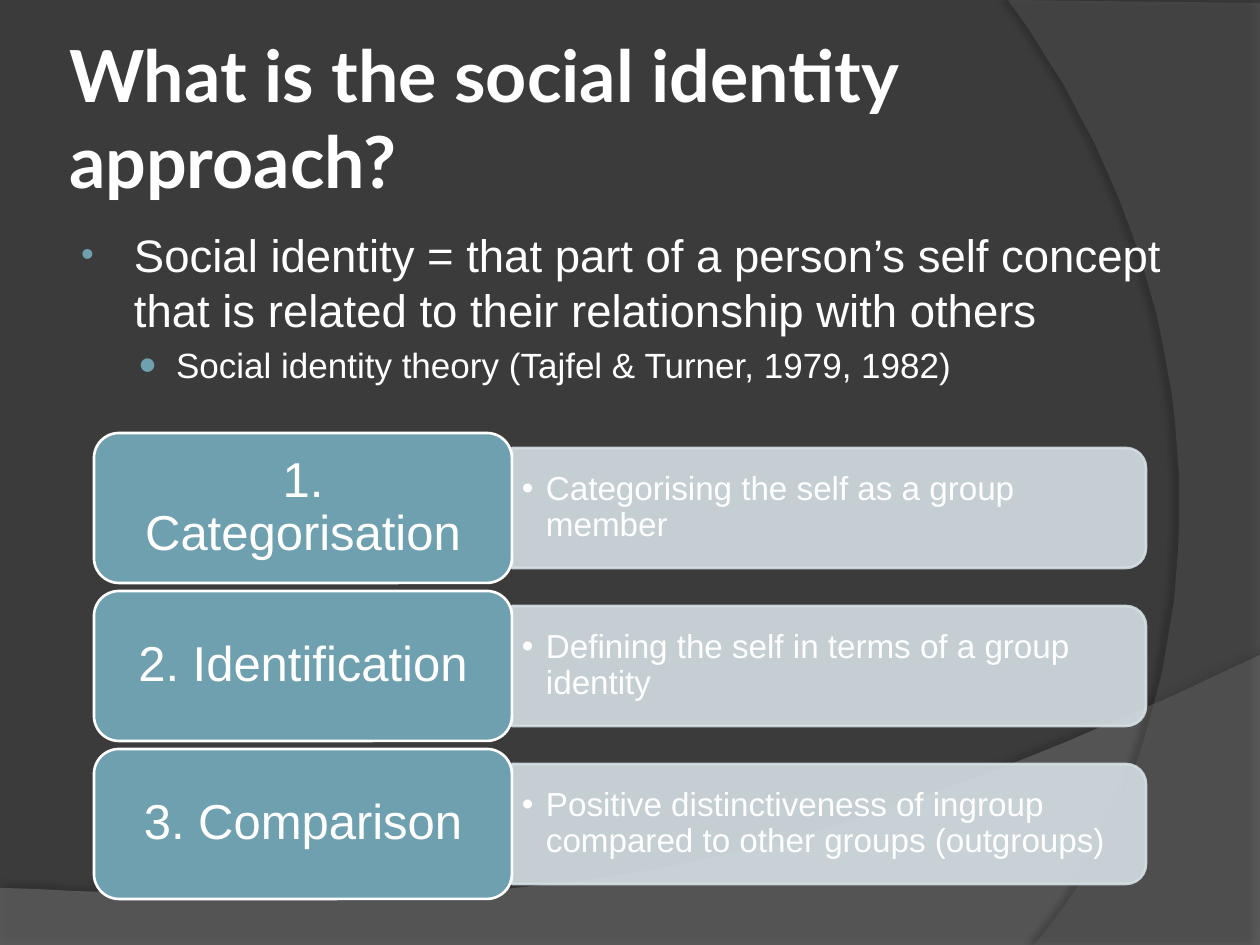
from lxml.etree import SubElement
from pptx import Presentation
from pptx.dml.color import RGBColor
from pptx.enum.shapes import MSO_SHAPE
from pptx.enum.text import MSO_ANCHOR, PP_ALIGN
from pptx.oxml.ns import qn
from pptx.util import Emu, Pt

SCALE = 914400 / 126


def px(n):
    return Emu(round(n * SCALE))


def color(code):
    return RGBColor.from_string(code)


def node(parent, tag, **attrs):
    return SubElement(parent, qn(tag), {k: str(v) for k, v in attrs.items()})


def curve(start, one, two, end, steps=40):
    """Points along a cubic curve, both ends included."""
    points = []
    for i in range(steps + 1):
        t = i / steps
        u = 1 - t
        points.append(tuple(u**3 * a + 3 * u * u * t * b + 3 * u * t * t * c + t**3 * d
                            for a, b, c, d in zip(start, one, two, end)))
    return points


class Deck:
    back, white, teal, pale = "3B3B3B", "FFFFFF", "6EA0B0", "D5DFE4"
    head, body = "Lato", "Arial"

    def __init__(self):
        self.prs = Presentation()
        self.prs.slide_width, self.prs.slide_height = px(1260), px(945)
        self.slide = self.prs.slides.add_slide(self.prs.slide_layouts[6])
        fill = self.slide.background.fill
        fill.solid()
        fill.fore_color.rgb = color(self.back)

    def paint(self, shape, fill, line=None, alpha=100):
        shape.shadow.inherit = False
        shape.fill.solid()
        shape.fill.fore_color.rgb = color(fill)
        if line:
            shape.line.color.rgb = color(line)
            shape.line.width = Pt(1.5)
        else:
            shape.line.fill.background()
        if alpha < 100:
            for tone in shape._element.spPr.iter(qn("a:srgbClr")):
                node(tone, "a:alpha", val=alpha * 1000)

    def wave(self, points, fill, alpha, dark, dist, angle):
        """A see-through sweep with a soft shadow."""
        pen = self.slide.shapes.build_freeform(*points[0], scale=SCALE)
        pen.add_line_segments(points[1:], close=True)
        shape = pen.convert_to_shape()
        self.paint(shape, fill, alpha=alpha)
        effects = shape._element.spPr.find(qn("a:effectLst"))
        shade = node(effects, "a:outerShdw", blurRad=Pt(4), dist=Pt(dist),
                     dir=angle * 60000, algn="ctr", rotWithShape=0)
        node(node(shade, "a:srgbClr", val="000000"), "a:alpha", val=dark * 1000)

    def shape(self, kind, x, y, w, h, fill, line, alpha=100):
        item = self.slide.shapes.add_shape(kind, px(x), px(y), px(w), px(h))
        self.paint(item, fill, line, alpha)
        return item

    def box(self, x, y, w, h, pad=(13, 6), anchor=MSO_ANCHOR.MIDDLE):
        item = self.slide.shapes.add_textbox(px(x), px(y), px(w), px(h))
        return self.frame(item, pad, anchor)

    def frame(self, item, pad, anchor=MSO_ANCHOR.MIDDLE):
        frame = item.text_frame
        frame.word_wrap = True
        frame.vertical_anchor = anchor
        frame.margin_left = frame.margin_right = px(pad[0])
        frame.margin_top = frame.margin_bottom = px(pad[1])
        return frame

    def text(self, para, words, size, font=None, bold=False, align=PP_ALIGN.LEFT):
        para.alignment = align
        run = para.add_run()
        run.text = words
        run.font.size, run.font.bold = Pt(size), bold
        run.font.name = font or self.body
        run.font.color.rgb = color(self.white)

    def bullet(self, para, mark, left, hang, tint, size=100):
        props = para._p.get_or_add_pPr()
        props.set("marL", str(px(left)))
        props.set("indent", str(-px(hang)))
        node(node(props, "a:buClr"), "a:srgbClr", val=tint)
        node(props, "a:buSzPct", val=size * 1000)
        node(props, "a:buFont", typeface=self.body)
        node(props, "a:buChar", char=mark)

    def step(self, y, name, note):
        """One row: a pale bar with a note, then the button over its end."""
        x, w, h = 94, 418, 150
        long, tall = 634, 120
        mid = y + h / 2
        # The bar stands upright and is turned about its centre
        bar = self.shape(MSO_SHAPE.ROUND_2_SAME_RECTANGLE, x + w + (long - tall) / 2,
                         mid - long / 2, tall, long, self.pale, self.pale, 90)
        bar.rotation = 90
        para = self.box(x + w, mid - 54, 629, 108, (10, 5)).paragraphs[0]
        para.level, para.line_spacing = 1, 0.9
        self.text(para, note, 19)
        self.bullet(para, "•", 24, 24, self.white)
        button = self.shape(MSO_SHAPE.ROUNDED_RECTANGLE, x, y, w, h, self.teal, self.white)
        para = self.frame(button, (22, 15)).paragraphs[0]
        para.line_spacing = 0.9
        self.text(para, name, 28, align=PP_ALIGN.CENTER)


def main():
    deck = Deck()

    # Background sweeps
    deck.wave([(0, 945), (1260, 945)] + curve((1260, 655), (704, 919), (493, 906), (0, 888)),
              "7F7F7F", 45, 35, 3.5, 270)
    deck.wave([(1260, 3), (1260, 945)] + curve((1034, 945), (1178, 780), (1283, 378), (1008, 0)),
              "5E5E5E", 40, 45, 4, 180)

    # Title
    title = deck.box(63, 38, 1029, 158, (6, 6))
    deck.text(title.paragraphs[0], "What is the social identity approach?", 41, deck.head, True)

    # Definition
    frame = deck.box(63, 221, 1113, 163, anchor=MSO_ANCHOR.TOP)
    lead = frame.paragraphs[0]
    lead.space_before = Pt(5)
    deck.text(lead, "Social identity = that part of a person’s self concept "
              "that is related to their relationship with others", 26)
    deck.bullet(lead, "•", 58, 53, deck.teal, 80)
    theory = frame.add_paragraph()
    theory.level, theory.space_before = 1, Pt(4)
    deck.text(theory, "Social identity theory (Tajfel & Turner, 1979, 1982)", 20)
    deck.bullet(theory, "●", 100, 38, deck.teal, 90)

    # Three steps
    steps = [
        ("1. Categorisation", "Categorising the self as a group member"),
        ("2. Identification", "Defining the self in terms of a group identity"),
        ("3. Comparison", "Positive distinctiveness of ingroup compared to other groups (outgroups)"),
    ]
    for i, (name, note) in enumerate(steps):
        deck.step(433 + 158 * i, name, note)

    deck.prs.save("out.pptx")


if __name__ == "__main__":
    main()
